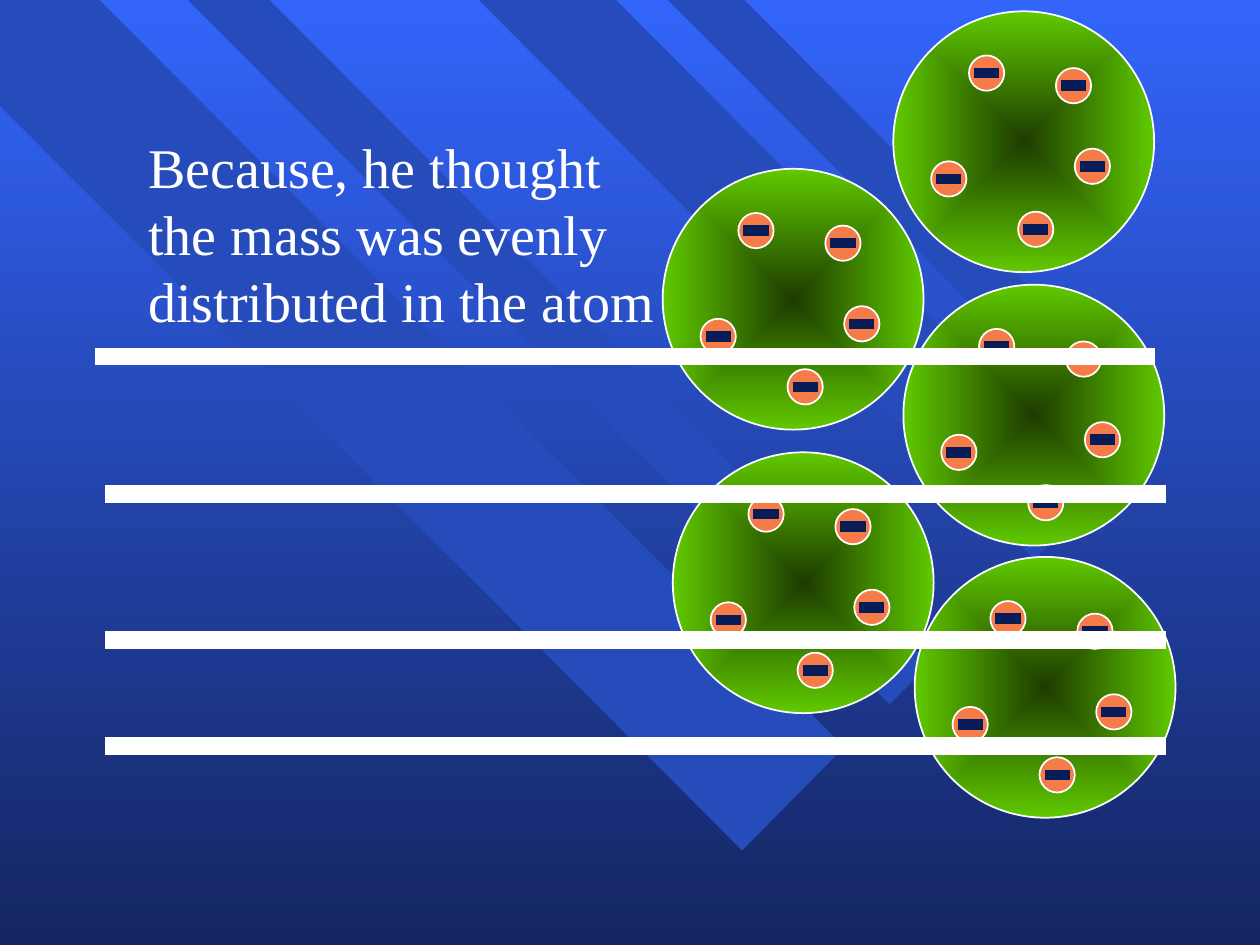
from lxml import etree
from pptx import Presentation
from pptx.dml.color import RGBColor
from pptx.enum.shapes import MSO_CONNECTOR, MSO_SHAPE
from pptx.oxml.ns import qn
from pptx.util import Inches, Pt

OVAL = MSO_SHAPE.OVAL
STRAIGHT = MSO_CONNECTOR.STRAIGHT

THEME = {
    "sky": ("3365FB", "142561"),
    "stripe": "264CBC",
    "atom": ("1D3C00", "60C900"),
    "electron": "F57B49",
    "minus": "081D58",
    "white": "FFFFFF",
    "font": "Times New Roman",
    "text_size": Pt(32),
    "text_pitch": Pt(38.4),
}

deck = Presentation()
deck.slide_width, deck.slide_height = Inches(10), Inches(7.5)
page = deck.slides.add_slide(deck.slide_layouts[6])
CELL = deck.slide_width // 10  # square grid: 10 columns by 7.5 rows


def grid(*values):
    return [round(value * CELL) for value in values]


def add_bar(shapes, left, right, row, color, weight):
    bar = shapes.add_connector(STRAIGHT, *grid(left, row, right, row))
    bar.line.color.rgb = RGBColor.from_string(color)
    bar.line.width = Pt(weight)
    etree.SubElement(bar._element.spPr, qn("a:effectLst"))


# Background gradient, top to bottom
sky = page.background.fill
sky.gradient()
sky.gradient_angle = 270
for stop, color in zip(sky.gradient_stops, THEME["sky"]):
    stop.color.rgb = RGBColor.from_string(color)

# Diagonal stripes
stripes = [
    [(6.7, 5.93), (0.79, 0), (0, 0), (0, 0.84), (5.89, 6.75)],
    [(2.14, 0), (7.38, 5.27), (7.06, 5.59), (1.49, 0)],
    [(4.89, 0), (8.76, 3.89), (8.21, 4.44), (3.8, 0)],
    [(5.3, 0), (8.97, 3.68), (9.27, 3.38), (5.91, 0)],
]
for corners in stripes:
    points = [grid(*corner) for corner in corners]
    builder = page.shapes.build_freeform(*points[0])
    builder.add_line_segments(points[1:], close=True)
    stripe = builder.convert_to_shape()
    stripe.shadow.inherit = False
    stripe.fill.solid()
    stripe.fill.fore_color.rgb = RGBColor.from_string(THEME["stripe"])
    stripe.line.fill.background()

# Statement
box = page.shapes.add_textbox(*grid(1.08, 1, 4.33, 1.7))
box.text_frame.word_wrap = True
para = box.text_frame.paragraphs[0]
para.text = "Because, he thought the mass was evenly distributed in the atom"
para.line_spacing = THEME["text_pitch"]
para.font.name = THEME["font"]
para.font.size = THEME["text_size"]
para.font.color.rgb = RGBColor.from_string(THEME["white"])

# Atoms, each with five electrons placed relative to its corner
ATOM_SIZE, ELECTRON_SIZE = 2.07, 0.28
atoms = [(5.26, 1.34), (7.09, 0.09), (7.17, 2.26), (7.26, 4.42), (5.34, 3.59)]
electrons = [(0.6, 0.35), (1.44, 1.09), (0.3, 1.19), (1.29, 0.45), (0.99, 1.59)]
for atom_left, atom_top in atoms:
    group = page.shapes.add_group_shape()
    atom = group.shapes.add_shape(OVAL, *grid(atom_left, atom_top, ATOM_SIZE, ATOM_SIZE))
    atom.fill.gradient()
    for stop, color in zip(atom.fill.gradient_stops, THEME["atom"]):
        stop.color.rgb = RGBColor.from_string(color)
    # Turn the linear gradient into one that spreads from the centre
    gradient = atom._element.spPr.find(qn("a:gradFill"))
    linear = gradient.find(qn("a:lin"))
    spread = etree.Element(qn("a:path"))
    spread.set("path", "shape")
    center = etree.SubElement(spread, qn("a:fillToRect"))
    for side in "ltrb":
        center.set(side, "50000")
    gradient.replace(linear, spread)
    rounds = [atom]

    for across, down in electrons:
        left, top = atom_left + across, atom_top + down
        electron = group.shapes.add_shape(OVAL, *grid(left, top, ELECTRON_SIZE, ELECTRON_SIZE))
        electron.fill.solid()
        electron.fill.fore_color.rgb = RGBColor.from_string(THEME["electron"])
        rounds.append(electron)
        add_bar(group.shapes, left + 0.04, left + 0.24, top + ELECTRON_SIZE / 2,
                THEME["minus"], 6)

    for ball in rounds:
        ball.shadow.inherit = False
        ball.line.color.rgb = RGBColor.from_string(THEME["white"])
        ball.line.width = Pt(1)

# White bars across the atoms
for left, row in [(0.83, 3.92), (0.83, 5.92), (0.75, 2.83), (0.83, 5.08)]:
    add_bar(page.shapes, left, left + 8.42, row, THEME["white"], 10)

deck.save("out.pptx")
